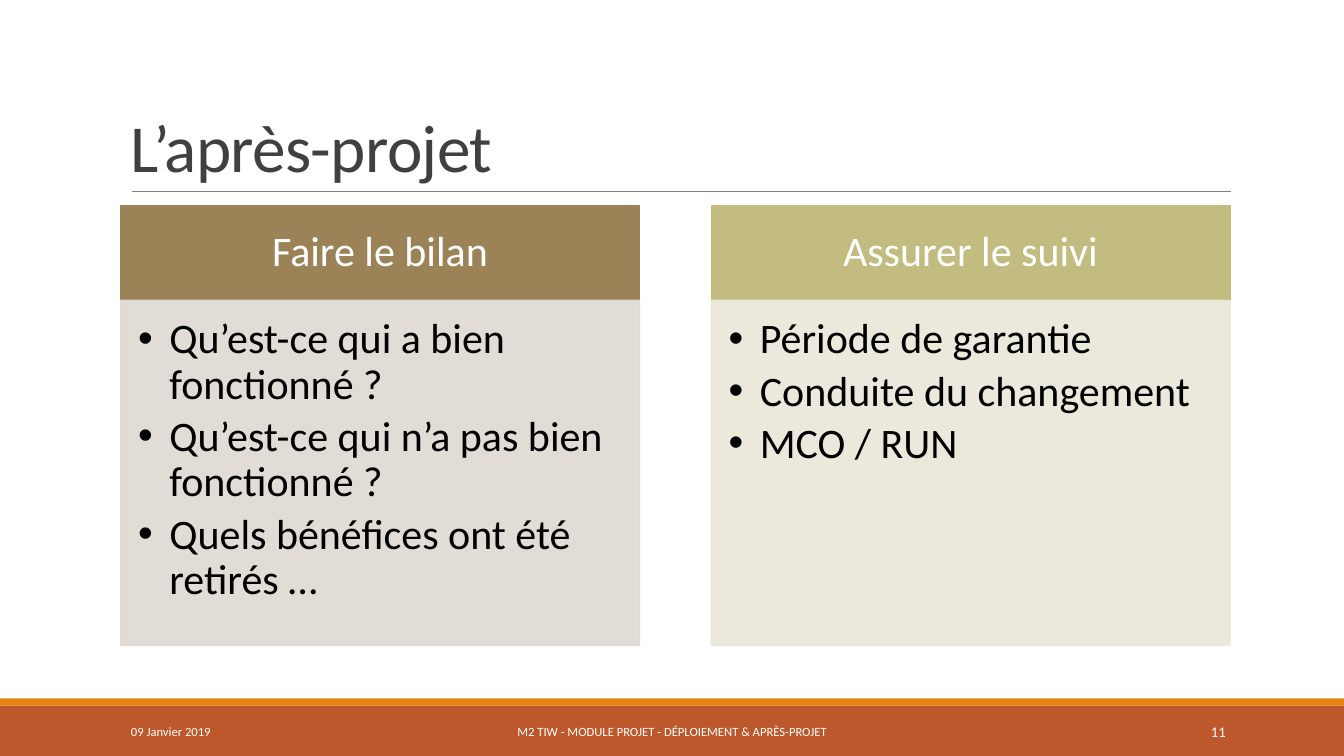
import pptx
import pptx.dml.color
import pptx.enum.shapes
import pptx.enum.text
import pptx.oxml.ns
import pptx.util
from lxml import etree

Cm = pptx.util.Cm
Pt = pptx.util.Pt
RGBColor = pptx.dml.color.RGBColor
Align = pptx.enum.text.PP_ALIGN
Anchor = pptx.enum.text.MSO_ANCHOR
qn = pptx.oxml.ns.qn

WHITE = RGBColor(0xFF, 0xFF, 0xFF)
BLACK = RGBColor(0x00, 0x00, 0x00)
CHARCOAL = RGBColor(0x40, 0x40, 0x40)
GRAY = RGBColor(0x80, 0x80, 0x80)
RUST = RGBColor(0xBD, 0x58, 0x2C)
ORANGE = RGBColor(0xE4, 0x83, 0x12)
BROWN = RGBColor(0x9B, 0x83, 0x57)
BEIGE = RGBColor(0xDE, 0xD9, 0xD1)
OLIVE = RGBColor(0xC2, 0xBC, 0x80)
CREAM = RGBColor(0xE9, 0xE7, 0xD8)

TITLE = "L’après-projet"
COLUMNS = [
    ("Faire le bilan", BROWN, BEIGE, [
        "Qu’est-ce qui a bien fonctionné ?",
        "Qu’est-ce qui n’a pas bien fonctionné ?",
        "Quels bénéfices ont été retirés …",
    ]),
    ("Assurer le suivi", OLIVE, CREAM, [
        "Période de garantie",
        "Conduite du changement",
        "MCO / RUN",
    ]),
]
FOOTER = [
    ("09 Janvier 2019", 3.05, 6.86, 9, Align.LEFT),
    ("M2 TIW - MODULE PROJET - DÉPLOIEMENT & APRÈS-PROJET", 10.24, 13.39, 9, Align.CENTER),
    ("11", 27.51, 3.63, 10.5, Align.RIGHT),
]

PAGE_WIDTH, PAGE_HEIGHT = 33.87, 19.05
LEFT, COLUMN_WIDTH, COLUMN_STEP = 3.05, 13.06, 14.88
HEAD_TOP, HEAD_HEIGHT, BODY_HEIGHT = 5.18, 2.39, 8.69
BAND_TOP, STRIPE_HEIGHT = 17.78, 0.18
INDENT = Cm(0.79)

HEAD_FRAME = {"vertical_anchor": Anchor.MIDDLE, "margin_left": Cm(0.58),
              "margin_right": Cm(0.58), "margin_top": Cm(0.33), "margin_bottom": Cm(0.33)}
BODY_FRAME = {"vertical_anchor": Anchor.TOP, "margin_left": Cm(0.43),
              "margin_right": Cm(0.58), "margin_top": Cm(0.43), "margin_bottom": Cm(0.66)}
HEAD_PARA = {"alignment": Align.CENTER, "line_spacing": 0.9}
BODY_PARA = {"alignment": Align.LEFT, "line_spacing": 0.9, "space_after": Pt(5)}


def apply(target, values):
    for name, value in values.items():
        setattr(target, name, value)


def write(box, lines, size, color, frame_format, para_format):
    frame = box.text_frame
    apply(frame, {"word_wrap": True, **frame_format})
    for number, line in enumerate(lines):
        para = frame.add_paragraph() if number else frame.paragraphs[0]
        apply(para, para_format)
        span = para.add_run()
        span.text = line
        apply(span.font, {"name": "Calibri", "size": Pt(size)})
        span.font.color.rgb = color
    return frame


def add_block(page, left, top, width, height, color, outlined=False, opacity=100):
    box = page.shapes.add_shape(pptx.enum.shapes.MSO_SHAPE.RECTANGLE,
                                Cm(left), Cm(top), Cm(width), Cm(height))
    box.shadow.inherit = False
    paints = [box.fill]
    if outlined:
        box.line.width = Pt(1.25)
        paints.append(box.line.fill)
    else:
        box.line.fill.background()
    for paint in paints:
        paint.solid()
        paint.fore_color.rgb = color
    if opacity < 100:
        for tint in box._element.spPr.iter(qn("a:srgbClr")):
            etree.SubElement(tint, qn("a:alpha"), val=str(opacity * 1000))
    return box


def add_text(page, left, top, width, height):
    return page.shapes.add_textbox(Cm(left), Cm(top), Cm(width), Cm(height))


def add_bullet(para):
    properties = para._p.get_or_add_pPr()
    apply_indent = {"marL": INDENT, "indent": -INDENT}
    for name, value in apply_indent.items():
        properties.set(name, str(int(value)))
    etree.SubElement(properties, qn("a:buFont"), typeface="Arial")
    etree.SubElement(properties, qn("a:buChar"), char="•")


def add_column(page, left, heading, head_color, body_color, points):
    head = add_block(page, left, HEAD_TOP, COLUMN_WIDTH, HEAD_HEIGHT, head_color, True)
    write(head, [heading], 30, WHITE, HEAD_FRAME, HEAD_PARA)
    body = add_block(page, left, HEAD_TOP + HEAD_HEIGHT, COLUMN_WIDTH, BODY_HEIGHT,
                     body_color, True, 90)
    for para in write(body, points, 30, BLACK, BODY_FRAME, BODY_PARA).paragraphs:
        add_bullet(para)


def add_title(page):
    rule = page.shapes.add_connector(pptx.enum.shapes.MSO_CONNECTOR.STRAIGHT,
                                     Cm(3.33), Cm(4.83), Cm(31.01), Cm(4.83))
    rule.line.width = Pt(0.5)
    rule.line.color.rgb = GRAY
    etree.SubElement(rule._element.spPr, qn("a:effectLst"))
    box = add_text(page, LEFT, 0.79, 27.94, 4.04)
    frame = write(box, [TITLE], 48, CHARCOAL, {"vertical_anchor": Anchor.BOTTOM},
                  {"line_spacing": 0.85})
    frame.paragraphs[0].runs[0]._r.get_or_add_rPr().set("spc", "-50")


def main():
    deck = pptx.Presentation()
    apply(deck, {"slide_width": Cm(PAGE_WIDTH), "slide_height": Cm(PAGE_HEIGHT)})
    page = deck.slides.add_slide(deck.slide_layouts[6])
    add_block(page, 0, BAND_TOP, PAGE_WIDTH, PAGE_HEIGHT - BAND_TOP, RUST)
    add_block(page, 0, BAND_TOP - STRIPE_HEIGHT, PAGE_WIDTH, STRIPE_HEIGHT, ORANGE)
    add_title(page)
    for number, column in enumerate(COLUMNS):
        add_column(page, LEFT + number * COLUMN_STEP, *column)
    for text, left, width, size, alignment in FOOTER:
        box = add_text(page, left, 17.93, width, 1.02)
        write(box, [text], size, WHITE, {"vertical_anchor": Anchor.MIDDLE},
              {"alignment": alignment})
    deck.save("out.pptx")


if __name__ == "__main__":
    main()
